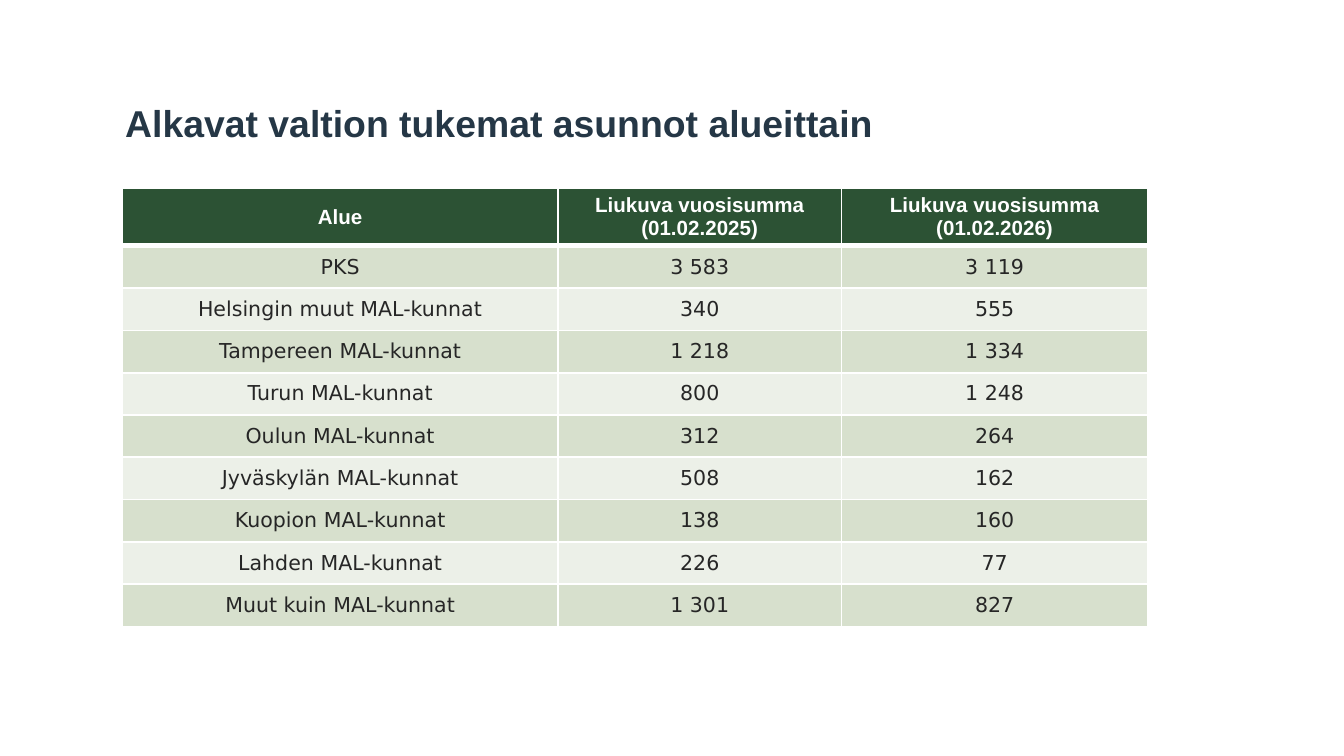
from typing import NamedTuple

from lxml.etree import SubElement
from pptx import Presentation
from pptx.dml.color import RGBColor
from pptx.enum.text import MSO_ANCHOR, PP_ALIGN
from pptx.oxml.ns import qn
from pptx.slide import Slide
from pptx.table import _Cell
from pptx.util import Pt

WHITE = RGBColor(0xFF, 0xFF, 0xFF)
NAVY = RGBColor(0x25, 0x37, 0x46)
DARK_GREEN = RGBColor(0x2C, 0x52, 0x34)
GREEN_BAND = RGBColor(0xD7, 0xE0, 0xCD)
PALE_BAND = RGBColor(0xEC, 0xF0, 0xE8)
DARK_GREY = RGBColor(0x26, 0x26, 0x26)

COLUMN_WIDTHS = (233.5, 151.75, 164.25)
HEADER_HEIGHT = 31
ROW_HEIGHT = 22.65


class CellStyle(NamedTuple):
    fill: RGBColor
    color: RGBColor
    font: str
    bold: bool
    top_border: float
    bottom_border: float


class Region(NamedTuple):
    name: str
    sum_2025: str
    sum_2026: str


HEADER = ("Alue", "Liukuva vuosisumma (01.02.2025)", "Liukuva vuosisumma (01.02.2026)")
REGIONS = (
    Region("PKS", "3 583", "3 119"),
    Region("Helsingin muut MAL-kunnat", "340", "555"),
    Region("Tampereen MAL-kunnat", "1 218", "1 334"),
    Region("Turun MAL-kunnat", "800", "1 248"),
    Region("Oulun MAL-kunnat", "312", "264"),
    Region("Jyväskylän MAL-kunnat", "508", "162"),
    Region("Kuopion MAL-kunnat", "138", "160"),
    Region("Lahden MAL-kunnat", "226", "77"),
    Region("Muut kuin MAL-kunnat", "1 301", "827"),
)


def row_style(row: int) -> CellStyle:
    if row == 0:
        return CellStyle(DARK_GREEN, WHITE, "Arial", True, 1, 3)
    band = GREEN_BAND if row % 2 else PALE_BAND
    return CellStyle(band, DARK_GREY, "DejaVu Sans", False, 3 if row == 1 else 1, 1)


def add_borders(cell: _Cell, style: CellStyle) -> None:
    """Put white lines on all four sides; they must precede the fill in the XML."""
    properties = cell._tc.get_or_add_tcPr()
    widths = {"a:lnL": 1, "a:lnR": 1, "a:lnT": style.top_border, "a:lnB": style.bottom_border}
    for tag, width in widths.items():
        line = SubElement(properties, qn(tag), w=str(Pt(width)))
        fill = SubElement(line, qn("a:solidFill"))
        SubElement(fill, qn("a:srgbClr"), val=str(WHITE))


def write_cell(cell: _Cell, text: str, style: CellStyle) -> None:
    add_borders(cell, style)
    cell.fill.solid()
    cell.fill.fore_color.rgb = style.fill
    cell.vertical_anchor = MSO_ANCHOR.MIDDLE
    cell.margin_top = cell.margin_bottom = Pt(2.5)
    cell.text = text
    paragraph = cell.text_frame.paragraphs[0]
    paragraph.alignment = PP_ALIGN.CENTER
    paragraph.font.size = Pt(11)
    paragraph.font.name = style.font
    paragraph.font.bold = style.bold
    paragraph.font.color.rgb = style.color


def add_region_table(slide: Slide) -> None:
    rows = (HEADER, *REGIONS)
    height = HEADER_HEIGHT + ROW_HEIGHT * len(REGIONS)
    table = slide.shapes.add_table(
        len(rows), len(HEADER), Pt(65.5), Pt(100.75), Pt(sum(COLUMN_WIDTHS)), Pt(height)
    ).table
    for column, width in zip(table.columns, COLUMN_WIDTHS):
        column.width = Pt(width)
    for row, texts in enumerate(rows):
        table.rows[row].height = Pt(ROW_HEIGHT if row else HEADER_HEIGHT)
        for column, text in enumerate(texts):
            write_cell(table.cell(row, column), text, row_style(row))


def add_title(slide: Slide, text: str) -> None:
    text_frame = slide.shapes.add_textbox(Pt(60), Pt(52), Pt(660), Pt(27.5)).text_frame
    text_frame.word_wrap = True
    text_frame.vertical_anchor = MSO_ANCHOR.MIDDLE
    text_frame.margin_top = text_frame.margin_bottom = 0
    paragraph = text_frame.paragraphs[0]
    paragraph.text = text
    paragraph.font.size = Pt(20)
    paragraph.font.name = "Arial"
    paragraph.font.bold = True
    paragraph.font.color.rgb = NAVY


def main() -> None:
    presentation = Presentation()
    presentation.slide_width = Pt(720)
    presentation.slide_height = Pt(405)
    slide = presentation.slides.add_slide(presentation.slide_layouts[6])
    add_region_table(slide)
    add_title(slide, "Alkavat valtion tukemat asunnot alueittain")
    presentation.save("out.pptx")


if __name__ == "__main__":
    main()
